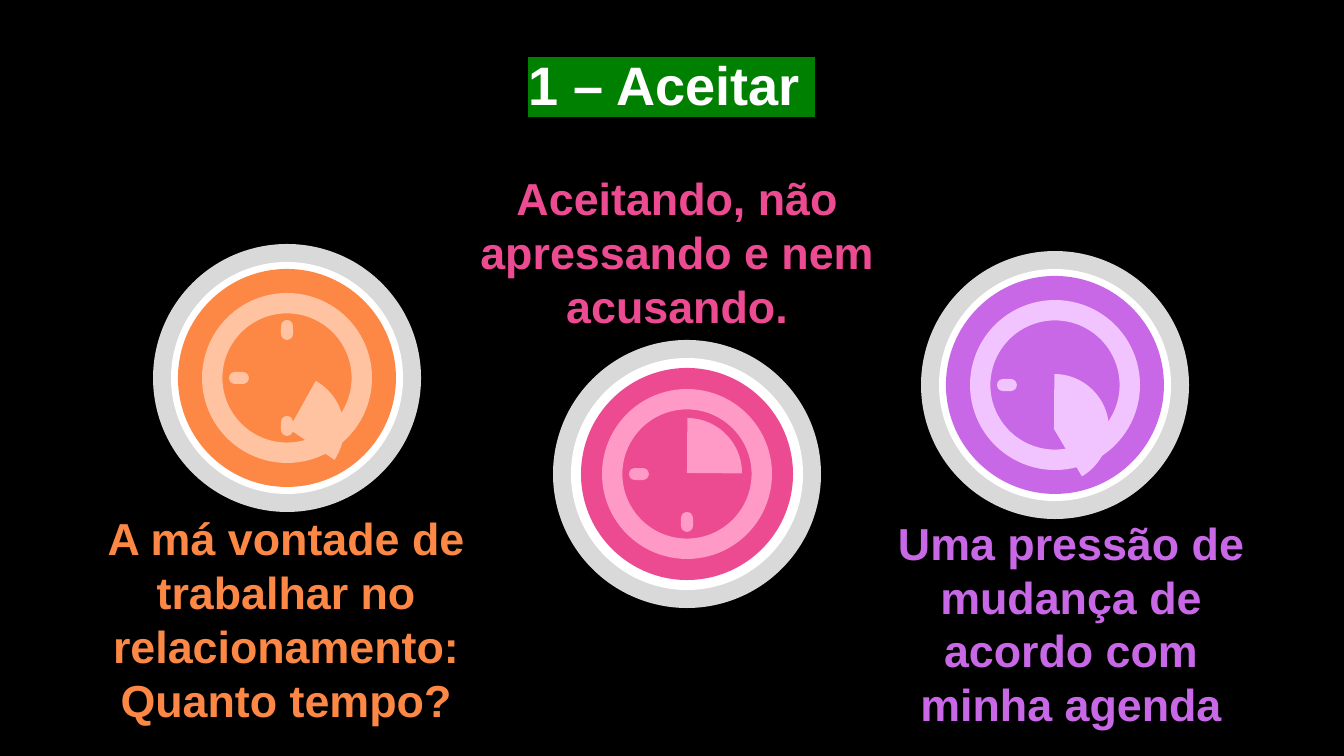
from dataclasses import dataclass

from lxml.etree import Element, SubElement
from pptx import Presentation
from pptx.dml.color import RGBColor
from pptx.enum.shapes import MSO_SHAPE as Shape
from pptx.enum.text import MSO_ANCHOR as Anchor, MSO_AUTO_SIZE as AutoSize, PP_ALIGN as Align
from pptx.oxml.ns import qn
from pptx.util import Emu, Inches, Pt

PX_PER_INCH = 134.4


@dataclass(frozen=True)
class Theme:
    font: str = "Arial"
    title_size: int = 29
    caption_size: int = 24
    leading: float = 1.2
    background: str = "000000"
    white: str = "FFFFFF"
    highlight: str = "008000"
    rim: str = "D9D9D9"
    orange: str = "FD8845"
    orange_light: str = "FFC3A1"
    pink: str = "EC4A91"
    pink_light: str = "FF99C5"
    purple: str = "C868E6"
    purple_light: str = "F1C4FF"


THEME = Theme()


def px(length):
    return Emu(round(Inches(length) / PX_PER_INCH))


def rgb(color):
    return RGBColor.from_string(color)


def place(holder, box):
    holder.left, holder.top, holder.width, holder.height = map(px, box)


def write(holder, text, *, size, color, highlight=None):
    frame = holder.text_frame
    frame.word_wrap = True
    frame.auto_size = AutoSize.NONE
    frame.vertical_anchor = Anchor.MIDDLE
    frame.margin_left = frame.margin_right = Inches(0.1)
    frame.margin_top = frame.margin_bottom = Inches(0.1)
    paragraph = frame.paragraphs[0]
    paragraph.alignment = Align.CENTER
    paragraph.space_before = Pt(0)
    paragraph.line_spacing = Pt(size * THEME.leading)
    run = paragraph.add_run()
    run.text = text
    font = run.font
    font.name, font.size, font.bold = THEME.font, Pt(size), True
    font.color.rgb = rgb(color)
    if highlight:
        mark = Element(qn("a:highlight"))
        SubElement(mark, qn("a:srgbClr"), val=highlight)
        run._r.rPr.find(qn("a:solidFill")).addnext(mark)


def add_caption(slide, text, box, color):
    caption = slide.shapes.add_textbox(*map(px, box))
    write(caption, text, size=THEME.caption_size, color=color)


def add_centered(slide, kind, center, size, color, adjustments=()):
    """Add a plain filled shape around its centre point."""
    (x, y), (width, height) = center, size
    box = (x - width // 2, y - height // 2, width, height)
    part = slide.shapes.add_shape(kind, *map(px, box))
    part.shadow.inherit = False
    part.fill.solid()
    part.fill.fore_color.rgb = rgb(color)
    part.line.fill.background()
    for index, value in enumerate(adjustments):
        part.adjustments[index] = value


def add_clock(slide, center, color, light, *, face, ticks, wedge_offset, wedge_angles):
    """Add a clock: rim, face, dial ring, hour ticks and a wedge of elapsed time."""
    x, y = center
    for diameter, fill in ((268, THEME.rim), (232, THEME.white), (face, color)):
        add_centered(slide, Shape.OVAL, center, (diameter, diameter), fill)
    add_centered(slide, Shape.DONUT, center, (170, 170), light, [0.12])
    for dx, dy in ticks:
        size = (20, 12) if dx else (12, 20)
        add_centered(slide, Shape.ROUNDED_RECTANGLE, (x + dx * 48, y + dy * 48),
                     size, light, [0.5])
    dx, dy = wedge_offset
    # Angles are stored in 60000ths of a degree, adjustments in 100000ths.
    add_centered(slide, Shape.PIE, (x + dx, y + dy), (110, 110), light,
                 [angle * 0.6 for angle in wedge_angles])


def main():
    deck = Presentation()
    deck.slide_width, deck.slide_height = px(1344), px(756)
    slide = deck.slides.add_slide(deck.slide_layouts[5])
    slide.background.fill.solid()
    slide.background.fill.fore_color.rgb = rgb(THEME.background)

    title = slide.shapes.title
    place(title, (67, 63, 1210, 42))
    write(title, "1 – Aceitar ", size=THEME.title_size, color=THEME.white,
          highlight=THEME.highlight)

    add_caption(slide, "Aceitando, não apressando e nem acusando.",
                (403, 226, 548, 51), THEME.pink)
    add_caption(slide, "A má vontade de trabalhar no relacionamento: Quanto tempo?",
                (83, 513, 406, 211), THEME.orange)
    add_caption(slide, "Uma pressão de mudança de acordo com minha agenda",
                (883, 560, 376, 126), THEME.purple)

    top, bottom, left = (0, -1), (0, 1), (-1, 0)
    add_clock(slide, (287, 378), THEME.orange, THEME.orange_light, face=218,
              ticks=(bottom, top, left), wedge_offset=(2, 51), wedge_angles=(299.07, 34.2))
    add_clock(slide, (687, 474), THEME.pink, THEME.pink_light, face=212,
              ticks=(bottom, left), wedge_offset=(0, -1), wedge_angles=(270.36, 0.39))
    add_clock(slide, (1055, 385), THEME.purple, THEME.purple_light, face=218,
              ticks=(left,), wedge_offset=(-1, 44), wedge_angles=(270.36, 59.51))

    deck.save("out.pptx")


if __name__ == "__main__":
    main()
